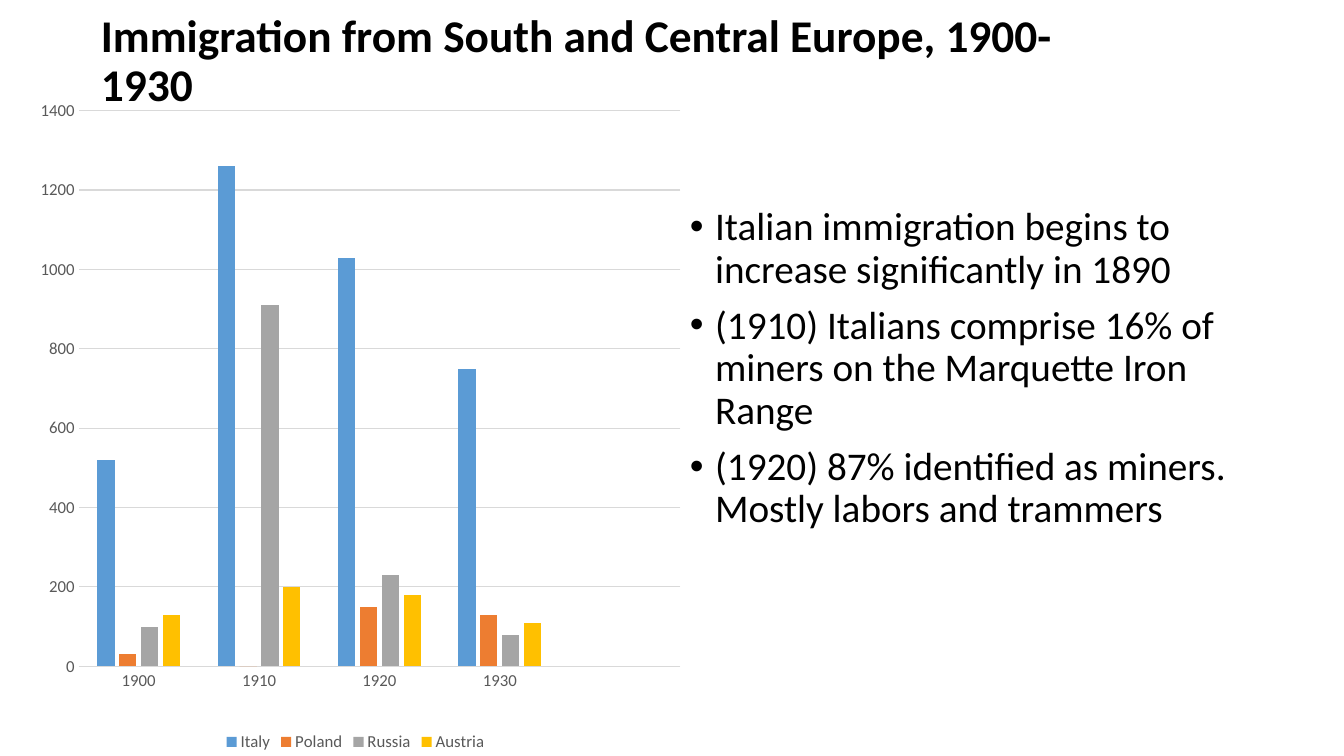
from lxml.etree import SubElement
from pptx import Presentation
from pptx.chart.data import CategoryChartData
from pptx.dml.color import RGBColor
from pptx.enum.chart import XL_CHART_TYPE, XL_LEGEND_POSITION, XL_TICK_MARK
from pptx.enum.text import MSO_ANCHOR
from pptx.oxml import parse_xml
from pptx.oxml.ns import nsdecls, qn
from pptx.util import Pt

EMU_PER_PX = 914400 / 100.8
FONT = "Calibri"
BLACK, GREY, GRID = "000000", "595959", "D9D9D9"

TITLE = "Immigration from South and Central Europe, 1900-1930"
BULLETS = [
    "Italian immigration begins to increase significantly in 1890",
    "(1910) Italians comprise 16% of miners on the Marquette Iron Range",
    "(1920) 87% identified as miners. Mostly labors and trammers",
]
YEARS = ["1900", "1910", "1920", "1930", ""]
IMMIGRANTS = {
    "Italy": ("5B9BD5", [520, 1260, 1030, 750, None]),
    "Poland": ("ED7D31", [30, 0, 150, 130, None]),
    "Russia": ("A5A5A5", [100, 910, 230, 80, None]),
    "Austria": ("FFC000", [130, 200, 180, 110, None]),
}
PLOT_LAYOUT = {"x": 0.091, "y": 0.034, "w": 0.889, "h": 0.832}


def px(length):
    return round(length * EMU_PER_PX)


def color(hex_value):
    return RGBColor.from_string(hex_value)


def apply_format(target, values):
    for name, value in values.items():
        setattr(target, name, value)


def format_font(font, size, hex_value, bold=False):
    apply_format(font, {"name": FONT, "size": Pt(size), "bold": bold})
    font.color.rgb = color(hex_value)


def format_line(line, hex_value):
    line.color.rgb = color(hex_value)
    line.width = Pt(0.75)


def add_text(slide, box, texts, size, anchor, bold=False):
    shape = slide.shapes.add_textbox(*map(px, box))
    frame = shape.text_frame
    apply_format(frame, {"word_wrap": True, "vertical_anchor": anchor})
    for index, text in enumerate(texts):
        paragraph = frame.add_paragraph() if index else frame.paragraphs[0]
        paragraph.line_spacing = 0.9
        run = paragraph.add_run()
        run.text = text
        format_font(run.font, size, BLACK, bold)
    return frame.paragraphs


def add_title(slide, box):
    add_text(slide, box, [TITLE], 32.4, MSO_ANCHOR.MIDDLE, bold=True)


def add_bullets(slide, box):
    for paragraph in add_text(slide, box, BULLETS, 28, MSO_ANCHOR.TOP):
        paragraph.space_before = Pt(10)
        properties = paragraph._p.get_or_add_pPr()
        properties.set("marL", "228600")
        properties.set("indent", "-228600")
        SubElement(properties, qn("a:buFont"), typeface="Arial")
        SubElement(properties, qn("a:buChar"), char="•")


def place_plot(chart):
    plot_area = chart._chartSpace.chart.plotArea
    for layout in plot_area.findall(qn("c:layout")):
        plot_area.remove(layout)
    modes = "".join(f'<c:{axis}Mode val="edge"/>' for axis in "xy")
    sizes = "".join(f'<c:{key} val="{value}"/>' for key, value in PLOT_LAYOUT.items())
    plot_area.insert(0, parse_xml(
        f'<c:layout {nsdecls("c")}><c:manualLayout><c:layoutTarget val="inner"/>'
        f"{modes}{sizes}</c:manualLayout></c:layout>"))


def add_immigration_chart(slide, box):
    data = CategoryChartData()
    data.categories = YEARS
    for country, (_, values) in IMMIGRANTS.items():
        data.add_series(country, values)
    chart = slide.shapes.add_chart(
        XL_CHART_TYPE.COLUMN_CLUSTERED, *map(px, box), data).chart
    apply_format(chart, {"has_title": False, "has_legend": True})
    format_font(chart.font, 10, BLACK)
    apply_format(chart.legend, {
        "position": XL_LEGEND_POSITION.BOTTOM, "include_in_layout": False})
    format_font(chart.legend.font, 12, GREY)

    plot = chart.plots[0]
    apply_format(plot, {"gap_width": 219, "overlap": -27, "vary_by_categories": False})
    for series, (fill, _) in zip(plot.series, IMMIGRANTS.values()):
        series.format.fill.solid()
        series.format.fill.fore_color.rgb = color(fill)

    for axis in (chart.category_axis, chart.value_axis):
        apply_format(axis, {
            "major_tick_mark": XL_TICK_MARK.NONE, "minor_tick_mark": XL_TICK_MARK.NONE})
        format_font(axis.tick_labels.font, 12, GREY)
    format_line(chart.category_axis.format.line, GRID)
    apply_format(chart.value_axis, {
        "minimum_scale": 0, "maximum_scale": 1400, "major_unit": 200,
        "has_major_gridlines": True})
    chart.value_axis.format.line.fill.background()
    format_line(chart.value_axis.major_gridlines.format.line, GRID)
    place_plot(chart)


def main():
    presentation = Presentation()
    apply_format(presentation, {"slide_width": px(1344), "slide_height": px(756)})
    slide = presentation.slides.add_slide(presentation.slide_layouts[6])
    add_title(slide, (91, 20, 1049, 85))
    add_immigration_chart(slide, (17, 88, 677, 668))
    add_bullets(slide, (680, 202, 572, 480))
    presentation.save("out.pptx")


if __name__ == "__main__":
    main()
